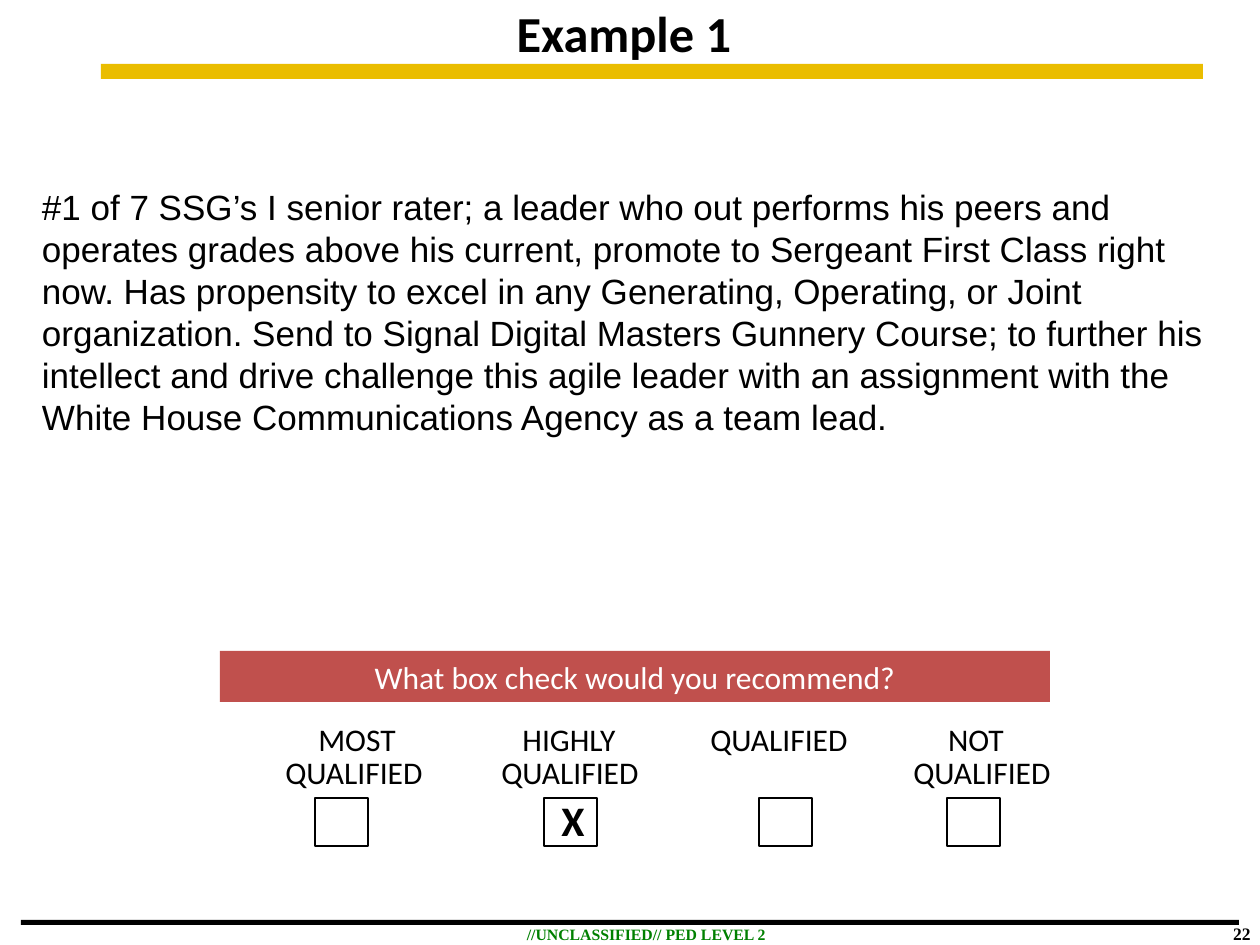
from dataclasses import dataclass

from pptx import Presentation
from pptx.dml.color import RGBColor
from pptx.enum.shapes import MSO_SHAPE
from pptx.enum.text import MSO_ANCHOR, PP_ALIGN
from pptx.util import Emu, Pt

RECTANGLE = MSO_SHAPE.RECTANGLE
TOP = MSO_ANCHOR.TOP
LEFT, CENTER, RIGHT = PP_ALIGN.LEFT, PP_ALIGN.CENTER, PP_ALIGN.RIGHT
EMU_PER_PX = 914400 / 126
COLORS = {
    "gold": "EABD00",
    "black": "000000",
    "green": "008000",
    "red": "C0504D",
    "white": "FFFFFF",
}
LABEL_WIDTH, LABEL_HEIGHT = 262, 50
LABEL_TOPS = (714, 747)
CHECKBOX_WIDTH, CHECKBOX_HEIGHT, CHECKBOX_TOP = 53, 48, 798
RECOMMENDATION = (
    "#1 of 7 SSG’s I senior rater; a leader who out performs his peers and "
    "operates grades above his current, promote to Sergeant First Class right "
    "now. Has propensity to excel in any Generating, Operating, or Joint "
    "organization. Send to Signal Digital Masters Gunnery Course; to further his "
    "intellect and drive challenge this agile leader with an assignment with the "
    "White House Communications Agency as a team lead."
)


@dataclass(frozen=True)
class Box:
    """A rectangle in px."""

    left: int
    top: int
    width: int
    height: int

    def emu(self) -> list[Emu]:
        """Return the position and size in EMU."""
        return [px(n) for n in (self.left, self.top, self.width, self.height)]


@dataclass(frozen=True)
class TextStyle:
    """The look of a single-run text."""

    size: float
    font: str = "Calibri"
    color: str = "black"
    bold: bool = False
    align: PP_ALIGN = CENTER


@dataclass(frozen=True)
class Option:
    """A rating with its label lines, their centres and its checkbox."""

    lines: tuple[str, ...]
    centers: tuple[int, ...]
    checkbox_left: int


LABEL = TextStyle(18)
OPTIONS = (
    Option(("MOST", "QUALIFIED"), (357, 354), 315),
    Option(("HIGHLY", "QUALIFIED"), (569, 570), 544),
    Option(("QUALIFIED",), (779,), 759),
    Option(("NOT", "QUALIFIED"), (976, 982), 947),
)


def px(length: int) -> Emu:
    """Convert px to EMU."""
    return Emu(round(length * EMU_PER_PX))


def rgb(name: str) -> RGBColor:
    """Look up a named colour."""
    return RGBColor.from_string(COLORS[name])


def write(shape, text: str, style: TextStyle):
    """Set and format the text of a shape and return its paragraph."""
    shape.text_frame.text = text
    paragraph = shape.text_frame.paragraphs[0]
    paragraph.alignment = style.align
    font = paragraph.runs[0].font
    font.name, font.size, font.bold = style.font, Pt(style.size), style.bold
    font.color.rgb = rgb(style.color)
    return paragraph


def add_text(slide, box: Box, text: str, style: TextStyle,
             inset: bool = True, wrap: bool = True):
    """Add a text box and return its paragraph."""
    shape = slide.shapes.add_textbox(*box.emu())
    frame = shape.text_frame
    frame.word_wrap = wrap
    frame.vertical_anchor = TOP
    if not inset:
        frame.margin_left = frame.margin_right = 0
        frame.margin_top = frame.margin_bottom = 0
    return write(shape, text, style)


def add_rectangle(slide, box: Box, fill: str | None = None, line: str | None = None):
    """Add a rectangle with an optional fill and outline."""
    shape = slide.shapes.add_shape(RECTANGLE, *box.emu())
    shape.shadow.inherit = False
    if fill:
        shape.fill.solid()
        shape.fill.fore_color.rgb = rgb(fill)
    else:
        shape.fill.background()
    if line:
        shape.line.color.rgb = rgb(line)
        shape.line.width = Pt(1.5)
    else:
        shape.line.fill.background()
    return shape


def add_option(slide, option: Option) -> None:
    """Add the label lines and checkbox of a rating."""
    for text, center, top in zip(option.lines, option.centers, LABEL_TOPS):
        box = Box(center - LABEL_WIDTH // 2, top, LABEL_WIDTH, LABEL_HEIGHT)
        add_text(slide, box, text, LABEL)
    checkbox = Box(option.checkbox_left, CHECKBOX_TOP, CHECKBOX_WIDTH, CHECKBOX_HEIGHT)
    add_rectangle(slide, checkbox, line="black")


def main() -> None:
    """Build and save the slide."""
    presentation = Presentation()
    presentation.slide_width, presentation.slide_height = px(1260), px(945)
    slide = presentation.slides.add_slide(presentation.slide_layouts[6])

    add_rectangle(slide, Box(101, 64, 1102, 15), fill="gold")
    add_rectangle(slide, Box(21, 920, 1218, 5), fill="black")
    add_text(slide, Box(504, 919, 284, 32), "//UNCLASSIFIED// PED LEVEL 2",
             TextStyle(9, "Times New Roman", "green", True))
    add_text(slide, Box(1197, 917, 66, 33), "22",
             TextStyle(10, "Times New Roman", bold=True, align=RIGHT))

    add_text(slide, Box(81, 2, 1086, 58), "Example 1",
             TextStyle(28.8, bold=True), inset=False)
    body = add_text(slide, Box(42, 185, 1197, 336), RECOMMENDATION,
                    TextStyle(20, "Arial", align=LEFT), inset=False)
    body.line_spacing = Pt(24)

    banner = add_rectangle(slide, Box(220, 651, 830, 51), fill="red")
    write(banner, "What box check would you recommend?", TextStyle(18, color="white"))
    for option in OPTIONS:
        add_option(slide, option)
    add_text(slide, Box(549, 788, 49, 63), "X",
             TextStyle(24, bold=True, align=LEFT), wrap=False)

    presentation.save("out.pptx")


if __name__ == "__main__":
    main()
